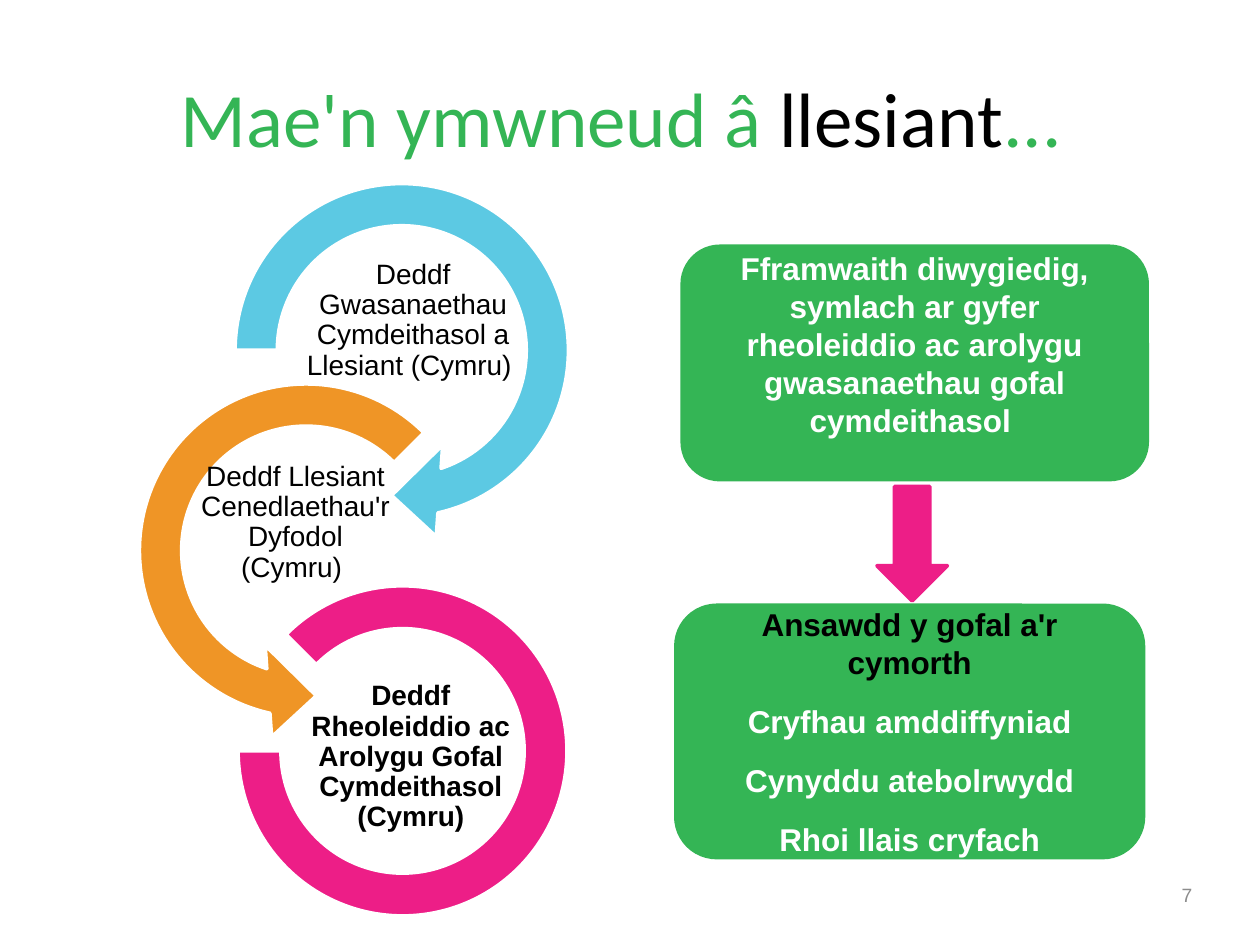
from pptx import Presentation
from pptx.dml.color import RGBColor
from pptx.enum.shapes import MSO_SHAPE as Kind
from pptx.enum.text import MSO_ANCHOR, PP_ALIGN
from pptx.util import Pt

GREEN = RGBColor(0x34, 0xB5, 0x55)
BLUE = RGBColor(0x5C, 0xC9, 0xE3)
ORANGE = RGBColor(0xEF, 0x95, 0x26)
PINK = RGBColor(0xED, 0x1E, 0x87)
GREY = RGBColor(0x8C, 0x8C, 0x8C)
BLACK = RGBColor(0, 0, 0)
WHITE = RGBColor(0xFF, 0xFF, 0xFF)

ARCS = [
    (Kind.CIRCULAR_ARROW, (120.2, 90.7, 218.9, 218.9), BLUE,
     (0.11, 11.42, 45, 108, 0.12),
     "Deddf Gwasanaethau Cymdeithasol a Llesiant (Cymru) ",
     (167, 151.2, 138.2, 64.1), False),
    (Kind.LEFT_CIRCULAR_ARROW, (65.5, 205.2, 218.9, 218.9), ORANGE,
     (0.11, 11.42, 63, 189, 0.12),
     "Deddf Llesiant Cenedlaethau'r Dyfodol (Cymru) ",
     (110.9, 264.2, 115.9, 69.1), False),
    (Kind.BLOCK_ARC, (136.1, 334.8, 187.9, 188.6), PINK,
     (135, 108, 0.13),
     "Deddf Rheoleiddio ac Arolygu Gofal Cymdeithasol (Cymru)",
     (175, 394.6, 119.5, 76.3), True),
]
REFORM = [("Fframwaith diwygiedig, symlach ar gyfer rheoleiddio ac arolygu "
           "gwasanaethau gofal cymdeithasol ", WHITE)]
GOALS = [
    ("Ansawdd y gofal a'r cymorth", BLACK),
    ("Cryfhau amddiffyniad", WHITE),
    ("Cynyddu atebolrwydd", WHITE),
    ("Rhoi llais cryfach", WHITE),
]


def style(para, size, color, name="Arial", bold=False, align=PP_ALIGN.CENTER):
    """Set the font and alignment of a paragraph."""
    para.alignment = align
    font = para.font
    font.name, font.size, font.bold = name, Pt(size), bold
    if color is not None:
        font.color.rgb = color


def add_text(slide, box, inset=None):
    """Add a wrapped, middle-anchored text box and return its frame."""
    frame = slide.shapes.add_textbox(*map(Pt, box)).text_frame
    frame.word_wrap = True
    frame.vertical_anchor = MSO_ANCHOR.MIDDLE
    if inset is not None:
        frame.margin_left = frame.margin_right = Pt(inset)
        frame.margin_top = frame.margin_bottom = Pt(inset)
    return frame


def add_form(slide, kind, box, fill, line=None):
    """Add a flat filled shape with an optional outline."""
    shape = slide.shapes.add_shape(kind, *map(Pt, box))
    shape.shadow.inherit = False
    shape.fill.solid()
    shape.fill.fore_color.rgb = fill
    if line is None:
        shape.line.fill.background()
    else:
        shape.line.color.rgb = line
        shape.line.width = Pt(2)
    return shape


def add_arc(slide, kind, box, color, turns, text, area, bold):
    """Add one link of the chain with its label."""
    shape = add_form(slide, kind, box, color, WHITE)
    for i, turn in enumerate(turns):
        shape.adjustments[i] = turn
    para = add_text(slide, area, 0.7).paragraphs[0]
    para.text = text
    para.line_spacing = 0.9
    para.space_after = Pt(3)
    style(para, 16, BLACK, bold=bold)


def add_card(slide, box, items, foot=3.6):
    """Add a green rounded card holding bold paragraphs."""
    frame = add_form(slide, Kind.ROUNDED_RECTANGLE, box, GREEN).text_frame
    frame.word_wrap = True
    frame.vertical_anchor = MSO_ANCHOR.MIDDLE
    frame.margin_bottom = Pt(foot)
    for i, (text, color) in enumerate(items):
        para = frame.add_paragraph() if i else frame.paragraphs[0]
        para.text = text
        para.space_after = Pt(12)
        style(para, 18, color, bold=True)


def add_title(slide):
    """Add the two-colour title."""
    para = add_text(slide, (36, 21.6, 648, 90)).paragraphs[0]
    style(para, 44, None, "Calibri")
    parts = [("Mae'n ymwneud â ", GREEN), ("llesiant", BLACK), ("... ", GREEN)]
    for text, color in parts:
        run = para.add_run()
        run.text = text
        run.font.color.rgb = color


def main():
    """Build the slide and save it."""
    deck = Presentation()
    deck.slide_width, deck.slide_height = Pt(720), Pt(540)
    slide = deck.slides.add_slide(deck.slide_layouts[6])
    para = add_text(slide, (520.6, 496.8, 167.8, 28.8)).paragraphs[0]
    para.text = "7"
    style(para, 11, GREY, align=PP_ALIGN.RIGHT)
    add_title(slide)
    for arc in ARCS:
        add_arc(slide, *arc)
    add_card(slide, (388.8, 139.7, 267.8, 135.4), REFORM, 25.2)
    add_card(slide, (385.2, 344.9, 269.3, 146.2), GOALS)
    add_form(slide, Kind.DOWN_ARROW, (501.1, 277.9, 40.3, 65.5), PINK, PINK)
    deck.save("out.pptx")


if __name__ == "__main__":
    main()
